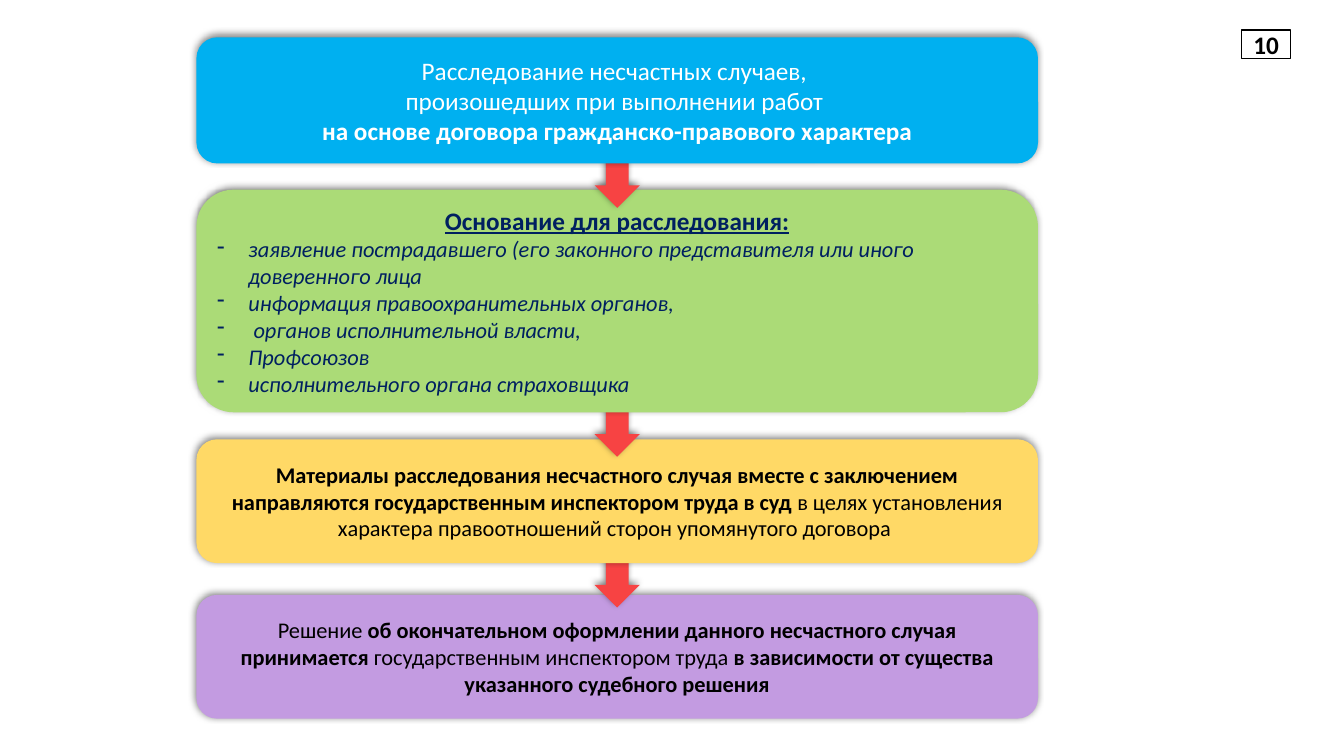
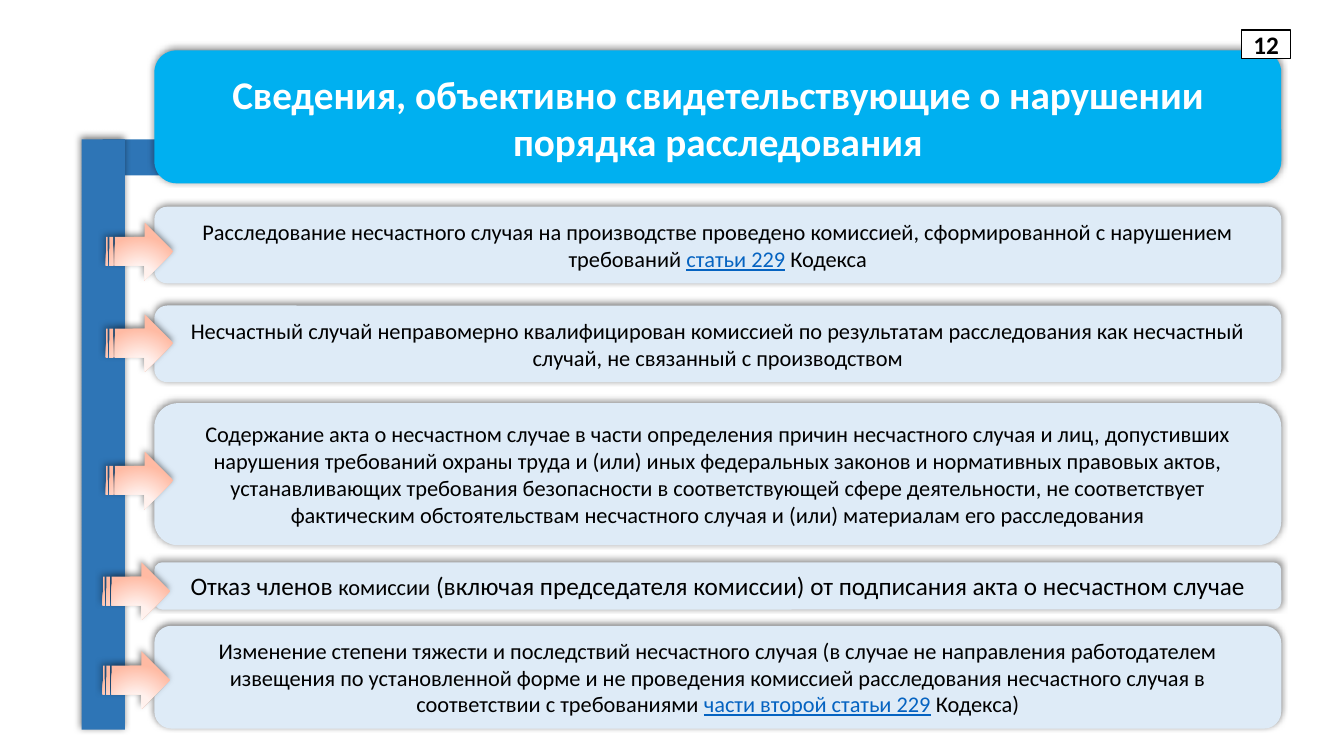
"""Builds two slides on the investigation of workplace accidents."""
from dataclasses import dataclass

from pptx import Presentation
from pptx.dml.color import RGBColor
from pptx.enum.shapes import MSO_SHAPE
from pptx.enum.text import MSO_ANCHOR, MSO_AUTO_SIZE, PP_ALIGN
from pptx.oxml import parse_xml
from pptx.oxml.ns import nsdecls, qn
from pptx.util import Cm, Pt

ROUNDED = MSO_SHAPE.ROUNDED_RECTANGLE
RECTANGLE = MSO_SHAPE.RECTANGLE
DOWN_ARROW = MSO_SHAPE.DOWN_ARROW
STRIPED_ARROW = MSO_SHAPE.STRIPED_RIGHT_ARROW
MIDDLE = MSO_ANCHOR.MIDDLE
CENTER, LEFT = PP_ALIGN.CENTER, PP_ALIGN.LEFT
NO_AUTOFIT = MSO_AUTO_SIZE.NONE
TITLE_ONLY = 5


@dataclass(frozen=True)
class Theme:
    """Colours, font and type sizes of the deck."""
    font: str = "Calibri"
    headline: int = 28
    lead: int = 18
    body: int = 16
    black: str = "000000"
    white: str = "FFFFFF"
    navy: str = "002060"
    link: str = "0563C1"
    title_fill: str = "00B0F0"
    green: str = "ABDB77"
    yellow: str = "FFD966"
    purple: str = "C39BE1"
    red: str = "F74343"
    pale_blue: str = "DEEBF7"
    rail: str = "2E75B6"
    glow: tuple = ((0, "FFF5F2"), (34, "FFF1ED"), (100, "FFBAA3"))


THEME = Theme()
BOLD = {"bold": True}
LINK = {"color": THEME.link, "underline": True}
ITALIC_ITEM = {"size": THEME.body, "bold": False, "underline": False,
               "italic": True, "bullet": True}

FLOW_LEFT, FLOW_WIDTH = 4.95, 21.21
FLOW_TITLE_TOP, FLOW_TITLE_HEIGHT = 0.94, 3.18
FLOW_ARROW_WIDTH, FLOW_ARROW_HEIGHT, FLOW_ARROW_OVERLAP = 1.14, 1.3, 0.18

FLOW_TITLE = [
    [("Расследование несчастных случаев, ", {})],
    [("произошедших при выполнении работ ", {})],
    [("на основе договора гражданско-правового характера", BOLD)],
]
GROUNDS = [
    "заявление пострадавшего (его законного представителя или иного доверенного лица",
    "информация правоохранительных органов,",
    " органов исполнительной власти,",
    "Профсоюзов",
    "исполнительного органа страховщика",
]
FLOW_STEPS = [
    (4.78, 5.61, THEME.green,
     [[("Основание для расследования:", {"size": THEME.lead, "bold": True, "underline": True})]]
     + [[(ground, ITALIC_ITEM)] for ground in GROUNDS], THEME.navy),
    (11.07, 3.12, THEME.yellow,
     [[("Материалы расследования несчастного случая вместе с заключением направляются "
        "государственным инспектором труда в суд ", BOLD),
       ("в целях установления характера правоотношений сторон упомянутого договора ", {})]],
     THEME.black),
    (14.99, 3.12, THEME.purple,
     [[("Решение ", {}),
       ("об окончательном оформлении данного несчастного случая принимается", BOLD),
       (" государственным инспектором труда ", {}),
       ("в зависимости от существа указанного судебного решения", BOLD)]],
     THEME.black),
]

CARD_LEFT, CARD_WIDTH = 3.89, 28.4
RAIL_TOP = 3.51
POINTER_WIDTH, POINTER_HEIGHT = 1.7, 1.45

VIOLATIONS_TITLE = [
    [("Сведения, объективно свидетельствующие о нарушении порядка расследования", BOLD)],
]
VIOLATIONS = [
    (5.21, 1.93, 2.67, 5.61,
     [("Расследование несчастного случая на производстве проведено комиссией, "
       "сформированной с нарушением требований ", {}),
      ("статьи 229", LINK), (" Кодекса", {})]),
    (7.7, 1.93, 2.67, 7.92,
     [("Несчастный случай неправомерно квалифицирован комиссией по результатам "
       "расследования как несчастный случай, не связанный с производством", {})]),
    (10.16, 3.58, 2.67, 11.38,
     [("Содержание акта о несчастном случае в части определения причин несчастного случая "
       "и лиц, допустивших нарушения требований охраны труда и (или) иных федеральных "
       "законов и нормативных правовых актов, устанавливающих требования безопасности в "
       "соответствующей сфере деятельности, не соответствует фактическим обстоятельствам "
       "несчастного случая и (или) материалам его расследования", {})]),
    (14.17, 1.19, 2.59, 14.17,
     [("Отказ членов ", {"size": THEME.lead}), ("комиссии", {}),
      (" (включая председателя комиссии) от подписания акта о несчастном случае",
       {"size": THEME.lead})]),
    (15.77, 2.59, 2.59, 16.41,
     [("Изменение степени тяжести и последствий несчастного случая (в случае не "
       "направления работодателем извещения по установленной форме и не проведения "
       "комиссией расследования несчастного случая в соответствии с требованиями ", {}),
      ("части второй статьи 229", LINK), (" Кодекса)", {})]),
]


def add_dash(paragraph):
    """Give a paragraph a hanging dash bullet."""
    properties = paragraph._p.get_or_add_pPr()
    properties.set("marL", str(Cm(0.79)))
    properties.set("indent", str(-Cm(0.79)))
    properties.append(parse_xml(f'<a:buChar {nsdecls("a")} char="-"/>'))


def write_text(shape, paragraphs, size=THEME.body, color=THEME.black):
    """Fill a shape with paragraphs of (text, format) runs."""
    frame = shape.text_frame
    frame.word_wrap = True
    frame.auto_size = NO_AUTOFIT
    frame.vertical_anchor = MIDDLE
    for index, runs in enumerate(paragraphs):
        paragraph = frame.add_paragraph() if index else frame.paragraphs[0]
        bulleted = runs[0][1].get("bullet", False)
        paragraph.alignment = LEFT if bulleted else CENTER
        if bulleted:
            add_dash(paragraph)
        for text, style in runs:
            run = paragraph.add_run()
            run.text = text
            font = run.font
            font.name = THEME.font
            font.size = Pt(style.get("size", size))
            font.color.rgb = RGBColor.from_string(style.get("color", color))
            font.bold = style.get("bold", False)
            font.italic = style.get("italic", False)
            font.underline = style.get("underline", False)


def add_shadow(shape):
    """Put a soft dark shadow on a shape."""
    effects = shape.element.spPr.find(qn("a:effectLst"))
    effects.append(parse_xml(
        f'<a:outerShdw {nsdecls("a")} blurRad="{Pt(5)}" dist="{Pt(2)}" dir="{245 * 60000}">'
        f'<a:srgbClr val="{THEME.black}"><a:alpha val="50000"/></a:srgbClr></a:outerShdw>'))


def add_block(slide, kind, left, top, width, height, fill=None, shadow=True):
    """Add a borderless preset shape, measured in centimetres."""
    block = slide.shapes.add_shape(kind, Cm(left), Cm(top), Cm(width), Cm(height))
    block.shadow.inherit = False
    block.line.fill.background()
    if fill:
        block.fill.solid()
        block.fill.fore_color.rgb = RGBColor.from_string(fill)
    if shadow:
        add_shadow(block)
    return block


def add_title(slide, left, top, width, height, paragraphs, size):
    """Set the title over a rounded blue panel."""
    add_block(slide, ROUNDED, left, top, width, height, THEME.title_fill)
    title = slide.shapes.title
    title.left, title.top, title.width, title.height = map(Cm, (left, top, width, height))
    title.text_frame.margin_left = title.text_frame.margin_right = Cm(0.45)
    write_text(title, paragraphs, size=size, color=THEME.white)
    title.element.getparent().append(title.element)


def add_page_number(slide, number):
    """Add the framed page number in the top right corner."""
    frame = add_block(slide, RECTANGLE, 31.29, 0.76, 1.24, 0.71, THEME.white, shadow=False)
    frame.line.color.rgb = RGBColor.from_string(THEME.black)
    frame.line.width = Pt(1)
    write_text(frame, [[(str(number), BOLD)]], size=THEME.lead)


def add_pointer(slide, left, top):
    """Add a striped arrow with a radial glow."""
    pointer = add_block(slide, STRIPED_ARROW, left, top, POINTER_WIDTH, POINTER_HEIGHT)
    pointer.fill.background()
    stops = "".join(f'<a:gs pos="{share * 1000}"><a:srgbClr val="{color}"/></a:gs>'
                    for share, color in THEME.glow)
    gradient = parse_xml(
        f'<a:gradFill {nsdecls("a")} rotWithShape="1"><a:gsLst>{stops}</a:gsLst>'
        '<a:path path="circle"><a:fillToRect l="50000" t="155000" r="50000" b="-55000"/>'
        '</a:path></a:gradFill>')
    properties = pointer.element.spPr
    properties.replace(properties.find(qn("a:noFill")), gradient)


def build_flow(slide):
    """Draw the investigation steps from the last one up to the title."""
    bottoms = [FLOW_TITLE_TOP + FLOW_TITLE_HEIGHT]
    bottoms += [top + height for top, height, *_ in FLOW_STEPS[:-1]]
    arrow_left = FLOW_LEFT + (FLOW_WIDTH - FLOW_ARROW_WIDTH) / 2
    for step, bottom_above in reversed(list(zip(FLOW_STEPS, bottoms))):
        top, height, fill, paragraphs, color = step
        panel = add_block(slide, ROUNDED, FLOW_LEFT, top, FLOW_WIDTH, height, fill)
        write_text(panel, paragraphs, color=color)
        add_block(slide, DOWN_ARROW, arrow_left, bottom_above - FLOW_ARROW_OVERLAP,
                  FLOW_ARROW_WIDTH, FLOW_ARROW_HEIGHT, THEME.red)
    add_title(slide, FLOW_LEFT, FLOW_TITLE_TOP, FLOW_WIDTH, FLOW_TITLE_HEIGHT,
              FLOW_TITLE, THEME.lead)


def build_violations(slide):
    """Draw the violations branching off a vertical rail."""
    add_block(slide, RECTANGLE, 2.59, RAIL_TOP, 1.52, 0.91, THEME.rail, shadow=False)
    add_title(slide, CARD_LEFT, 1.27, CARD_WIDTH, 3.35, VIOLATIONS_TITLE, THEME.headline)
    for top, height, _, _, runs in VIOLATIONS:
        card = add_block(slide, ROUNDED, CARD_LEFT, top, CARD_WIDTH, height, THEME.pale_blue)
        write_text(card, [runs])
    add_block(slide, RECTANGLE, 2.06, RAIL_TOP, 1.09, 14.88, THEME.rail)
    for _, _, pointer_left, pointer_top, _ in VIOLATIONS:
        add_pointer(slide, pointer_left, pointer_top)


def main():
    """Build and save the deck."""
    deck = Presentation()
    deck.slide_width, deck.slide_height = Cm(33.87), Cm(19.05)
    for build, number in ((build_flow, 10), (build_violations, 12)):
        slide = deck.slides.add_slide(deck.slide_layouts[TITLE_ONLY])
        build(slide)
        add_page_number(slide, number)
    deck.save("out.pptx")


if __name__ == "__main__":
    main()
